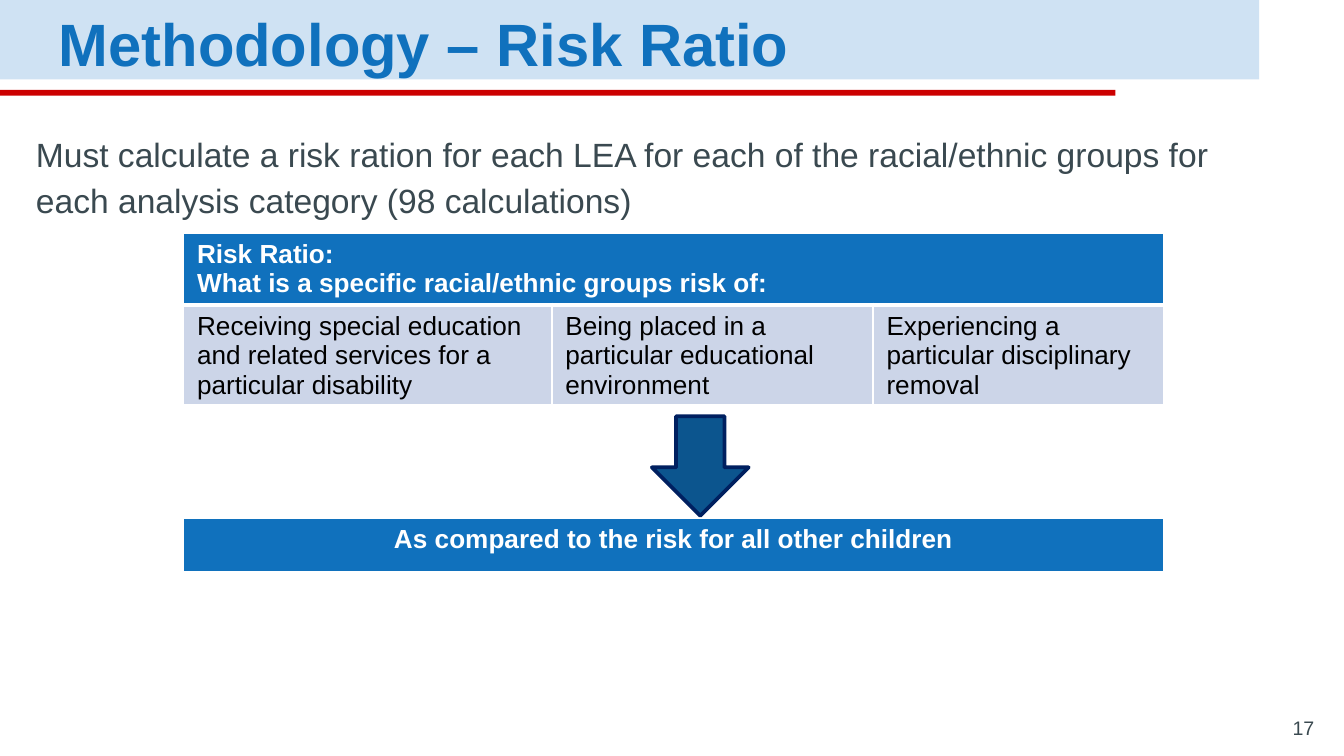
import pptx
import pptx.dml.color
import pptx.enum.shapes
import pptx.enum.text
import pptx.oxml
import pptx.oxml.ns
import pptx.util
from pptx.util import Cm, Pt

COLORS = {
    "blue": "1071BD",
    "pale": "CFE2F3",
    "red": "CC0000",
    "slate": "3A4950",
    "cell": "CCD5E8",
    "arrow": "0C558E",
    "navy": "002060",
    "white": "FFFFFF",
    "black": "000000",
}
ALIGN = pptx.enum.text.PP_ALIGN
ANCHOR = pptx.enum.text.MSO_ANCHOR
SHAPE = pptx.enum.shapes.MSO_SHAPE


def rgb(name):
    return pptx.dml.color.RGBColor.from_string(COLORS[name])


def write(tf, text, size=14, color="black", bold=False, align=ALIGN.LEFT,
          spacing=None, after=None, plain=False):
    for i, line in enumerate(text.split("\n")):
        p = tf.add_paragraph() if i else tf.paragraphs[0]
        p.alignment = align
        if spacing:
            p.line_spacing = spacing
            p.space_before = Pt(0)
            p.space_after = Pt(after)
        if plain:
            pPr = p._p.get_or_add_pPr()
            pPr.set("marL", "0")
            pPr.set("indent", "0")
            pPr.append(pptx.oxml.parse_xml(
                f"<a:buNone {pptx.oxml.ns.nsdecls('a')}/>"))
        r = p.add_run()
        r.text = line
        r.font.name = "Arial"
        r.font.size = Pt(size)
        r.font.bold = bold
        r.font.color.rgb = rgb(color)


class Deck:
    inset = Cm(0.25)

    def __init__(self, prs):
        self.s = prs.slides.add_slide(prs.slide_layouts[1])

    def frame(self, sp, anchor):
        tf = sp.text_frame
        tf.word_wrap = True
        tf.auto_size = pptx.enum.text.MSO_AUTO_SIZE.NONE
        tf.vertical_anchor = anchor
        tf.margin_left = tf.margin_right = self.inset
        tf.margin_top = tf.margin_bottom = self.inset
        return tf

    def placeholder(self, idx, box, text, anchor=ANCHOR.TOP, **style):
        sp = self.s.placeholders[idx]
        sp.left, sp.top, sp.width, sp.height = map(Cm, box)
        write(self.frame(sp, anchor), text, spacing=1.15, after=16,
              plain=True, **style)

    def text(self, box, text, anchor=ANCHOR.TOP, **style):
        sp = self.s.shapes.add_textbox(*map(Cm, box))
        write(self.frame(sp, anchor), text, **style)

    def shape(self, kind, box, fill, line=None, width=2):
        sp = self.s.shapes.add_shape(kind, *map(Cm, box))
        sp.shadow.inherit = False
        sp.fill.solid()
        sp.fill.fore_color.rgb = rgb(fill)
        if line:
            sp.line.color.rgb = rgb(line)
            sp.line.width = Pt(width)
        else:
            sp.line.fill.background()
        return sp

    def bar(self, box, fill):
        sp = self.shape(SHAPE.RECTANGLE, box, fill)
        self.s.shapes.title.element.addprevious(sp.element)

    def table(self, left, top, widths, heights):
        frame = self.s.shapes.add_table(
            len(heights), len(widths), Cm(left), Cm(top),
            Cm(sum(widths)), Cm(sum(heights)))
        table = frame.table
        for col, width in zip(table.columns, widths):
            col.width = Cm(width)
        for i, (row, height) in enumerate(zip(table.rows, heights)):
            row.height = Cm(height)
            for cell in row.cells:
                self.borders(cell, L=1, R=1, T=3 if i else 1, B=3)
        return table

    def borders(self, cell, **widths):
        tcPr = cell._tc.get_or_add_tcPr()
        for side, width in widths.items():
            tcPr.append(pptx.oxml.parse_xml(
                f"<a:ln{side} {pptx.oxml.ns.nsdecls('a')} w='{Pt(width)}'>"
                f"<a:solidFill><a:srgbClr val='{COLORS['white']}'/>"
                f"</a:solidFill></a:ln{side}>"))

    def cell(self, cell, text, fill, **style):
        cell.fill.solid()
        cell.fill.fore_color.rgb = rgb(fill)
        write(cell.text_frame, text, **style)


def main():
    prs = pptx.Presentation()
    prs.slide_width, prs.slide_height = Cm(25.4), Cm(14.29)
    deck = Deck(prs)

    deck.bar((0, 0, 23.8, 1.5), "pale")
    deck.bar((0, 1.7, 21.08, 0.11), "red")
    deck.placeholder(0, (0.86, 0.08, 22.94, 1.24), "Methodology – Risk Ratio",
                     ANCHOR.MIDDLE, size=32, color="blue", bold=True)
    deck.placeholder(
        1, (0.43, 2.16, 23.75, 9.98),
        "Must calculate a risk ration for each LEA for each of the "
        "racial/ethnic groups for each analysis category (98 calculations)",
        size=18, color="slate")
    deck.text((23.57, 13.56, 1.52, 0.66), "17", ANCHOR.BOTTOM,
              size=10.5, color="slate", align=ALIGN.RIGHT)

    widths = [6.96, 6.07, 5.49]
    heading = dict(fill="blue", color="white", bold=True)
    risks = deck.table(3.47, 4.4, widths, [1.36, 1.9])
    risks.cell(0, 0).merge(risks.cell(0, 2))
    deck.cell(risks.cell(0, 0),
              "Risk Ratio:\nWhat is a specific racial/ethnic groups risk of:",
              **heading)
    for i, risk in enumerate([
        "Receiving special education and related services for a "
        "particular disability",
        "Being placed in a particular educational environment",
        "Experiencing a particular disciplinary removal",
    ]):
        deck.cell(risks.cell(1, i), risk, "cell")

    deck.shape(SHAPE.DOWN_ARROW, (12.32, 7.87, 1.83, 1.88), "arrow", "navy")
    comparison = deck.table(3.47, 9.8, [sum(widths)], [1.04])
    deck.cell(comparison.cell(0, 0),
              "As compared to the risk for all other children",
              align=ALIGN.CENTER, **heading)

    prs.save("out.pptx")


if __name__ == "__main__":
    main()
